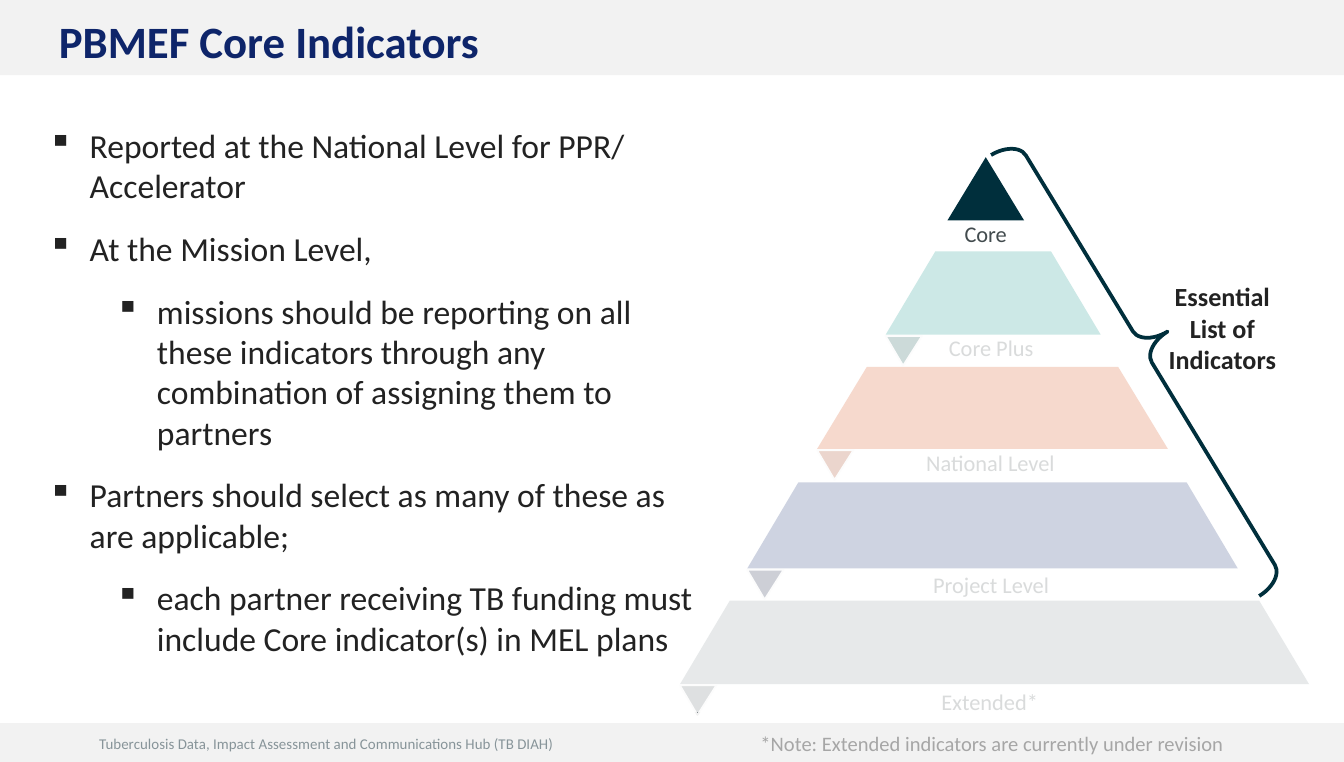
from lxml import etree
from pptx import Presentation
from pptx.dml.color import RGBColor
from pptx.enum.shapes import MSO_SHAPE
from pptx.enum.text import MSO_ANCHOR, PP_ALIGN
from pptx.oxml.ns import qn
from pptx.util import Inches, Pt

RECT, BRACE = MSO_SHAPE.RECTANGLE, MSO_SHAPE.RIGHT_BRACE
TOP, BOTTOM = MSO_ANCHOR.TOP, MSO_ANCHOR.BOTTOM
LEFT, CENTER = PP_ALIGN.LEFT, PP_ALIGN.CENTER
COLS, ROWS = 1000, 567
FONT = "Calibri"
COLORS = {
    "band": "F2F2F2", "title": "0E256A", "body": "222222", "foot": "879499",
    "note": "A6A6A6", "label": "424B4E", "veil": "FFFFFF", "core": "002F3C",
    "plus": "008C84", "plus fold": "004642", "nation": "D44106",
    "nation fold": "9F3105", "project": "0E256A", "project fold": "061235",
    "extend": "879499", "extend fold": "5C676C",
}
POINTS = [
    (0, "Reported at the National Level for PPR/ Accelerator"),
    (0, "At the Mission Level,"),
    (1, "missions should be reporting on all these indicators through any "
        "combination of assigning them to partners"),
    (0, "Partners should select as many of these as are applicable;"),
    (1, "each partner receiving TB funding must include Core indicator(s) "
        "in MEL plans"),
]
TIERS = [
    ("Core", "core", (216, 0, 57, 47), 28.5, (216, 42, 57, 30)),
    ("Core Plus", "plus", (170, 70, 160, 62), 37, (199, 127, 99, 30)),
    ("National Level", "nation", (119, 156, 261, 61), 37, (164, 212, 168, 30)),
    ("Project Level", "project", (67, 242, 365, 64), 38, (182, 303, 133, 30)),
    ("Extended*", "extend", (17, 330, 468, 62), 37, (189, 390, 117, 30)),
]


def cell(count):
    """Turn a count of grid cells into a length."""
    return Inches(count / 100)


def shift(box, part):
    """Move a part from the corner of its box to the slide grid."""
    return box[0] + part[0], box[1] + part[1], *part[2:]


def tint(name):
    """Look up a colour."""
    return RGBColor.from_string(COLORS[name])


def paint(shape, name):
    """Fill a shape flat, with no line or shadow."""
    shape.shadow.inherit = False
    shape.fill.solid()
    shape.fill.fore_color.rgb = tint(name)
    shape.line.fill.background()


def style(para, size, color, bold=False):
    """Set the look of each run in a paragraph."""
    for run in para.runs:
        run.font.name, run.font.size, run.font.bold = FONT, Pt(size), bold
        run.font.color.rgb = tint(color)


def write(shapes, box, text, size, color, bold=False, align=LEFT, anchor=TOP):
    """Add a text box with one paragraph and return that paragraph."""
    frame = shapes.add_textbox(*map(cell, box)).text_frame
    frame.word_wrap, frame.vertical_anchor = True, anchor
    frame.text = text
    para = frame.paragraphs[0]
    para.alignment = align
    style(para, size, color, bold)
    return para


def trace(shapes, points, color):
    """Draw a closed outline through grid points."""
    spots = [(cell(x), cell(y)) for x, y in points]
    pen = shapes.build_freeform(*spots[0])
    pen.add_line_segments(spots[1:], close=True)
    shape = pen.convert_to_shape()
    paint(shape, color)
    return shape


def curve(start, first, second, end, steps=24):
    """List points along a cubic curve, after its start."""
    return [
        tuple(
            (1 - t) ** 3 * a + 3 * (1 - t) ** 2 * t * b
            + 3 * (1 - t) * t ** 2 * c + t ** 3 * d
            for a, b, c, d in zip(start, first, second, end)
        )
        for t in (n / steps for n in range(1, steps + 1))
    ]


def band(shapes, box):
    """Draw a pale band."""
    paint(shapes.add_shape(RECT, *map(cell, box)), "band")


def header(shapes, box):
    """Place the top band and the title."""
    band(shapes, box)
    write(shapes, shift(box, (34, 5, 854, 50)), "PBMEF Core Indicators",
          24, "title", True, anchor=BOTTOM)


def footer(shapes, box):
    """Place the bottom band, the source line and the note."""
    band(shapes, box)
    write(shapes, shift(box, (64, 4, 500, 24)),
          "Tuberculosis Data, Impact Assessment and Communications Hub (TB DIAH)",
          8, "foot")
    note = write(shapes, shift(box, (518, 1, 455, 29)),
                 "*Note: Extended indicators are currently under revision",
                 11, "note")
    note._p.get_or_add_pPr().set("marL", str(cell(38)))


def bullets(shapes, box):
    """Place the two-level bullet list."""
    frame = shapes.add_textbox(*map(cell, box)).text_frame
    frame.word_wrap = True
    for place, (level, text) in enumerate(POINTS):
        para = frame.add_paragraph() if place else frame.paragraphs[0]
        para.text, para.level = text, level
        para.space_before = Pt(12 if place else 0)
        props = para._p.get_or_add_pPr()
        props.set("marL", str(cell(31 + 50 * level)))
        props.set("indent", str(-cell(31)))
        hue = etree.SubElement(props, qn("a:buClr"))
        etree.SubElement(hue, qn("a:srgbClr"), val=COLORS["body"])
        etree.SubElement(props, qn("a:buChar"), char="▪")
        style(para, 18, "body")


def tier(shapes, box, name, color, part, inset, label):
    """Draw one level of the pyramid with its fold and label."""
    x, y, wide, high = shift(box, part)
    base = y + high
    trace(shapes, [(x, base), (x + inset, y), (x + wide - inset, y),
                   (x + wide, base)], color)
    if color + " fold" in COLORS:
        fold = trace(shapes, [(x + 13, base + 23), (x, base + 1),
                              (x + 27, base + 1)], color + " fold")
        fold.line.color.rgb, fold.line.width = tint("band"), Pt(0.89)
    write(shapes, shift(box, label), name, 12, "label", align=CENTER)


def veil(shapes, box):
    """Fade the lower levels with a translucent white outline."""
    left, peak, right = (0, 413), (263, 69), (504, 286 + 127)
    points = [left, *curve(left, (91, 286), (138, 22), peak),
              *curve(peak, (349, 25), (427, 286), right)]
    shape = trace(shapes, [shift(box, spot) for spot in points], "veil")
    hue = shape.fill._xPr.find(".//" + qn("a:srgbClr"))
    etree.SubElement(hue, qn("a:alpha"), val="80000")


def pyramid(shapes, box):
    """Place the levels, the veil, the brace and its caption."""
    group = shapes.add_group_shape().shapes
    for row in TIERS:
        tier(group, box, *row)
    veil(shapes, box)
    brace = shapes.add_shape(BRACE, *map(cell, shift(box, (345, -41, 44, 384))))
    brace.shadow.inherit = False
    brace.rotation = 328.7
    brace.adjustments[0], brace.adjustments[1] = 0.31, 0.47
    brace.fill.background()
    brace.line.color.rgb, brace.line.width = tint("core"), Pt(2)
    write(shapes, shift(box, (361, 87, 119, 81)),
          "Essential List of Indicators", 14, "body", True, CENTER)


def main():
    """Build and save the slide."""
    deck = Presentation()
    deck.slide_width, deck.slide_height = cell(COLS), cell(ROWS)
    shapes = deck.slides.add_slide(deck.slide_layouts[6]).shapes
    header(shapes, (0, 0, COLS, 56))
    footer(shapes, (0, 538, COLS, 29))
    bullets(shapes, (26, 88, 507, 412))
    pyramid(shapes, (489, 117, 504, 419))
    deck.save("out.pptx")


if __name__ == "__main__":
    main()
